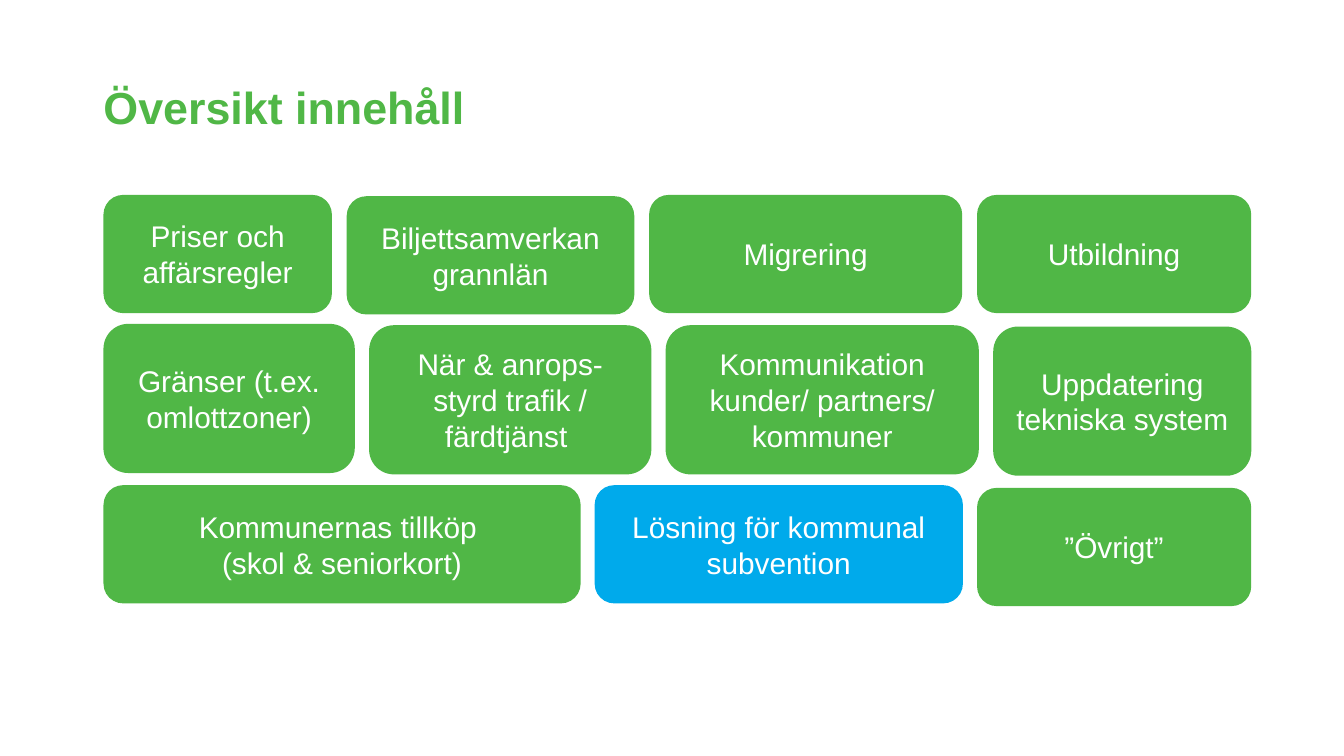
import pptx
import pptx.util
import pptx.dml.color
import pptx.enum.shapes
import pptx.enum.text

Inches = pptx.util.Inches
Pt = pptx.util.Pt
RGBColor = pptx.dml.color.RGBColor

GREEN = RGBColor(0x50, 0xB7, 0x46)
BLUE = RGBColor(0x00, 0xAA, 0xEB)
WHITE = RGBColor(0xFF, 0xFF, 0xFF)
FONT = "Arial"

# Each row: height, and its topics as (top, width, fill, lines)
ROWS = [
    (0.88, [
        (1.45, 1.7, GREEN, ["Priser och affärsregler"]),
        (1.46, 2.14, GREEN, ["Biljettsamverkan grannlän"]),
        (1.45, 2.33, GREEN, ["Migrering"]),
        (1.45, 2.04, GREEN, ["Utbildning"]),
    ]),
    (1.11, [
        (2.41, 1.87, GREEN, ["Gränser (t.ex. omlottzoner)"]),
        (2.42, 2.1, GREEN, ["När & anrops-styrd trafik / färdtjänst "]),
        (2.42, 2.33, GREEN, ["Kommunikation kunder/ partners/ kommuner"]),
        (2.43, 1.92, GREEN, ["Uppdatering tekniska system"]),
    ]),
    (0.88, [
        (3.61, 3.55, GREEN, ["Kommunernas tillköp ", "(skol & seniorkort)"]),
        (3.61, 2.74, BLUE, ["Lösning för kommunal subvention"]),
        (3.63, 2.04, GREEN, ["”Övrigt”"]),
    ]),
]


def style_paragraph(para, size, color, bold=False):
    para.font.name = FONT
    para.font.size = Pt(size)
    para.font.bold = bold
    para.font.color.rgb = color


def add_title(page, left, top, width, height, text):
    box = page.shapes.add_textbox(Inches(left), Inches(top), Inches(width), Inches(height))
    frame = box.text_frame
    frame.word_wrap = True
    frame.margin_left = frame.margin_right = frame.margin_top = frame.margin_bottom = 0
    para = frame.paragraphs[0]
    para.text = text
    para.line_spacing = 0.9
    style_paragraph(para, 24, GREEN, bold=True)


def add_topic(page, left, top, width, height, fill, lines):
    box = page.shapes.add_shape(
        pptx.enum.shapes.MSO_SHAPE.FLOWCHART_ALTERNATE_PROCESS,
        Inches(left), Inches(top), Inches(width), Inches(height))
    box.shadow.inherit = False
    box.fill.solid()
    box.fill.fore_color.rgb = fill
    box.line.fill.background()
    frame = box.text_frame
    frame.word_wrap = True
    frame.vertical_anchor = pptx.enum.text.MSO_ANCHOR.MIDDLE
    frame.text = "\n".join(lines)
    for para in frame.paragraphs:
        para.alignment = pptx.enum.text.PP_ALIGN.CENTER
        style_paragraph(para, 16, WHITE)


def add_topic_row(page, left, width, height, topics):
    """Spread the topics over the full width with equal gaps."""
    gap = (width - sum(topic[1] for topic in topics)) / (len(topics) - 1)
    for top, topic_width, fill, lines in topics:
        add_topic(page, left, top, topic_width, height, fill, lines)
        left += topic_width + gap


def main():
    # Widescreen page, 16:9
    deck = pptx.Presentation()
    deck.slide_width = Inches(10)
    deck.slide_height = deck.slide_width * 9 // 16
    page = deck.slides.add_slide(deck.slide_layouts[6])

    # Heading
    add_title(page, 0.77, 0.64, 8.43, 0.37, "Översikt innehåll")

    # Topic overview
    for height, topics in ROWS:
        add_topic_row(page, 0.77, 8.54, height, topics)

    deck.save("out.pptx")


if __name__ == "__main__":
    main()
